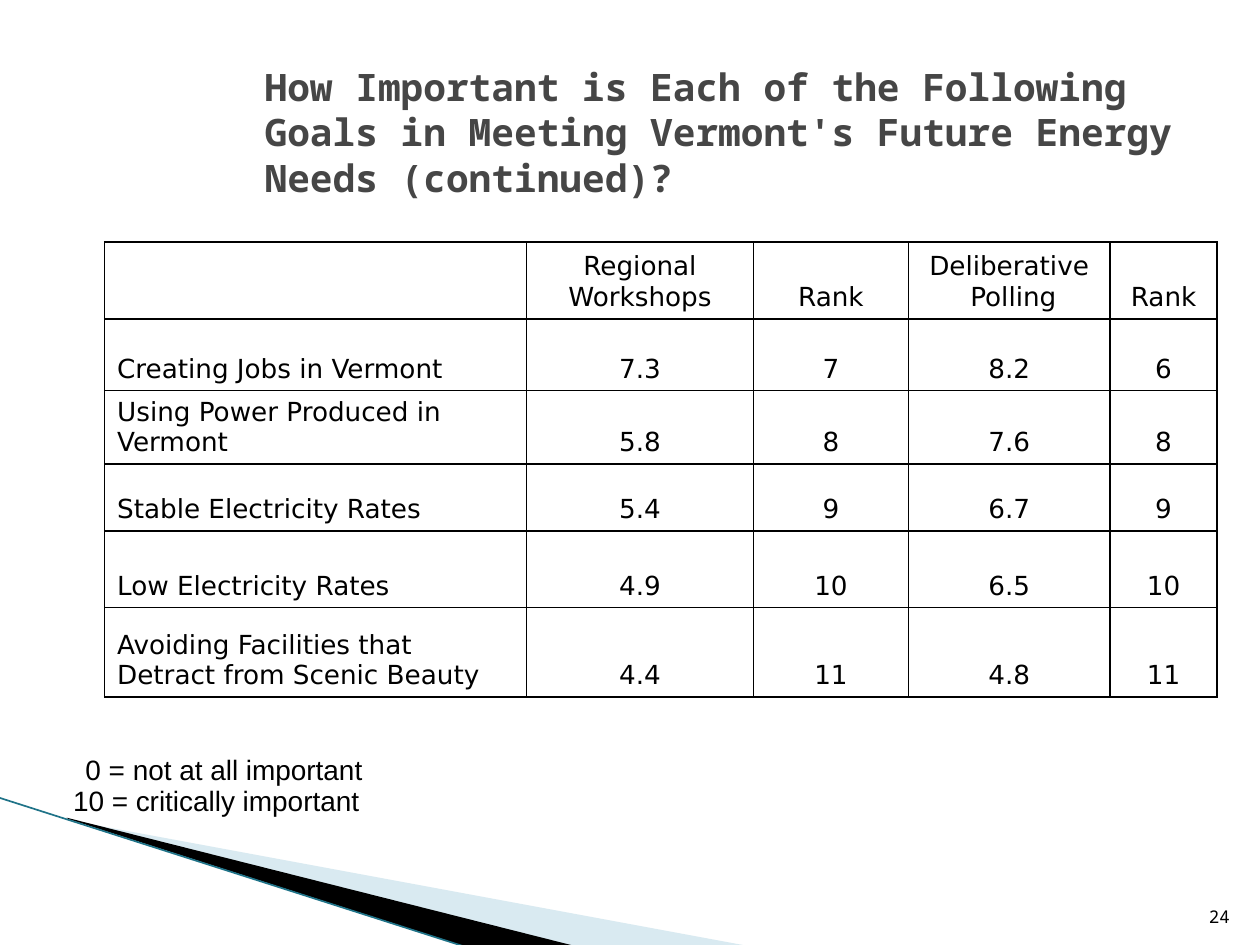
from lxml import etree
from pptx import Presentation
from pptx.dml.color import RGBColor
from pptx.enum.shapes import MSO_CONNECTOR
from pptx.enum.text import MSO_ANCHOR as ANCHOR, MSO_AUTO_SIZE as AUTO, PP_ALIGN as ALIGN
from pptx.oxml import parse_xml
from pptx.oxml.ns import nsdecls, qn
from pptx.util import Inches, Pt

COLS = [3.35, 1.8, 1.23, 1.6, 0.85]
ROWS = [0.61, 0.57, 0.58, 0.53, 0.61, 0.71]
GOALS = [
    ["", "Regional\nWorkshops", "Rank", "Deliberative\n Polling", "Rank"],
    ["Creating Jobs in Vermont", "7.3", "7", "8.2", "6"],
    ["Using Power Produced in Vermont", "5.8", "8", "7.6", "8"],
    ["Stable Electricity Rates", "5.4", "9", "6.7", "9"],
    ["Low Electricity Rates", "4.9", "10", "6.5", "10"],
    ["Avoiding Facilities that Detract from Scenic Beauty", "4.4", "11", "4.8", "11"],
]


def rgb(color):
    return RGBColor.from_string(color)


def write(tf, text, font="DejaVu Sans", size=15, color="000000", bold=False, align=ALIGN.LEFT):
    for i, line in enumerate(text.split("\n")):
        p = tf.add_paragraph() if i else tf.paragraphs[0]
        p.alignment = align
        p.font.size = Pt(size)
        if not line:
            continue
        r = p.add_run()
        r.text = line
        r.font.name = font
        r.font.size = Pt(size)
        r.font.bold = bold
        r.font.color.rgb = rgb(color)


def add_text(s, box, text, anchor=ANCHOR.TOP, wrap=True, **fmt):
    sp = s.shapes.add_textbox(*map(Inches, box))
    tf = sp.text_frame
    tf.word_wrap = wrap
    tf.auto_size = AUTO.NONE if wrap else AUTO.SHAPE_TO_FIT_TEXT
    tf.vertical_anchor = anchor
    write(tf, text, **fmt)


def set_title(s, box, text, **fmt):
    sp = s.shapes.title
    sp.left, sp.top, sp.width, sp.height = map(Inches, box)
    tf = sp.text_frame
    tf.word_wrap = True
    tf.auto_size = AUTO.NONE
    tf.vertical_anchor = ANCHOR.MIDDLE
    write(tf, text, **fmt)


def add_wedge(s, points, color, alpha=None):
    start, *rest = [(Inches(x), Inches(y)) for x, y in points]
    fb = s.shapes.build_freeform(*start)
    fb.add_line_segments(rest)
    sp = fb.convert_to_shape()
    sp.shadow.inherit = False
    sp.line.fill.background()
    sp.fill.solid()
    sp.fill.fore_color.rgb = rgb(color)
    if alpha:
        clr = sp.fill._xPr.find(".//" + qn("a:srgbClr"))
        etree.SubElement(clr, qn("a:alpha")).set("val", str(alpha * 1000))


def add_line(s, start, end, color, width):
    c = s.shapes.add_connector(MSO_CONNECTOR.STRAIGHT, *map(Inches, start + end))
    c.line.color.rgb = rgb(color)
    c.line.width = Pt(width)
    etree.SubElement(c._element.spPr, qn("a:effectLst"))


def set_borders(cell, color="000000", width=1):
    tcPr = cell._tc.get_or_add_tcPr()
    for i, side in enumerate("LRTB"):
        tcPr.insert(i, parse_xml(
            f'<a:ln{side} {nsdecls("a")} w="{Pt(width)}"><a:solidFill>'
            f'<a:srgbClr val="{color}"/></a:solidFill></a:ln{side}>'))


def add_goal_table(s, left, top):
    table = s.shapes.add_table(len(ROWS), len(COLS), Inches(left), Inches(top),
                               Inches(sum(COLS)), Inches(sum(ROWS))).table
    table.first_row = table.horz_banding = False
    for col, width in zip(table.columns, COLS):
        col.width = Inches(width)
    for row, height, texts in zip(table.rows, ROWS, GOALS):
        row.height = Inches(height)
        for j, (cell, text) in enumerate(zip(row.cells, texts)):
            cell.fill.background()
            cell.vertical_anchor = ANCHOR.BOTTOM
            set_borders(cell)
            write(cell.text_frame, text, align=ALIGN.CENTER if j else ALIGN.LEFT)


def main():
    prs = Presentation()
    prs.slide_width, prs.slide_height = Inches(10), Inches(7.5)
    s = prs.slides.add_slide(prs.slide_layouts[5])
    add_wedge(s, [(0.55, 6.51), (5.95, 7.51), (4.56, 7.51), (0.55, 6.5)], "A0CBDC", alpha=40)
    add_wedge(s, [(0.53, 6.49), (4.57, 7.51), (3.72, 7.52), (0.54, 6.5)], "000000")
    add_line(s, (-0.01, 6.33), (3.71, 7.52), "1F7388", 0.95)
    add_text(s, (9.46, 7.01, 0.4, 0.4), "24", anchor=ANCHOR.BOTTOM,
             font="Noto Sans Mono", size=10, align=ALIGN.RIGHT)
    set_title(s, (2, 0.61, 8, 0.87),
              "How Important is Each of the Following Goals in Meeting "
              "Vermont's Future Energy Needs (continued)?",
              font="Noto Sans Mono", size=21.6, color="464646", bold=True)
    add_goal_table(s, 0.83, 1.92)
    add_text(s, (0.58, 5.92, 2.41, 0.37), "0 = not at all important",
             wrap=False, font="Arial", size=16)
    add_text(s, (0.42, 6.17, 2.54, 0.37), " 10 = critically important",
             wrap=False, font="Arial", size=16)
    prs.save("out.pptx")


if __name__ == "__main__":
    main()
